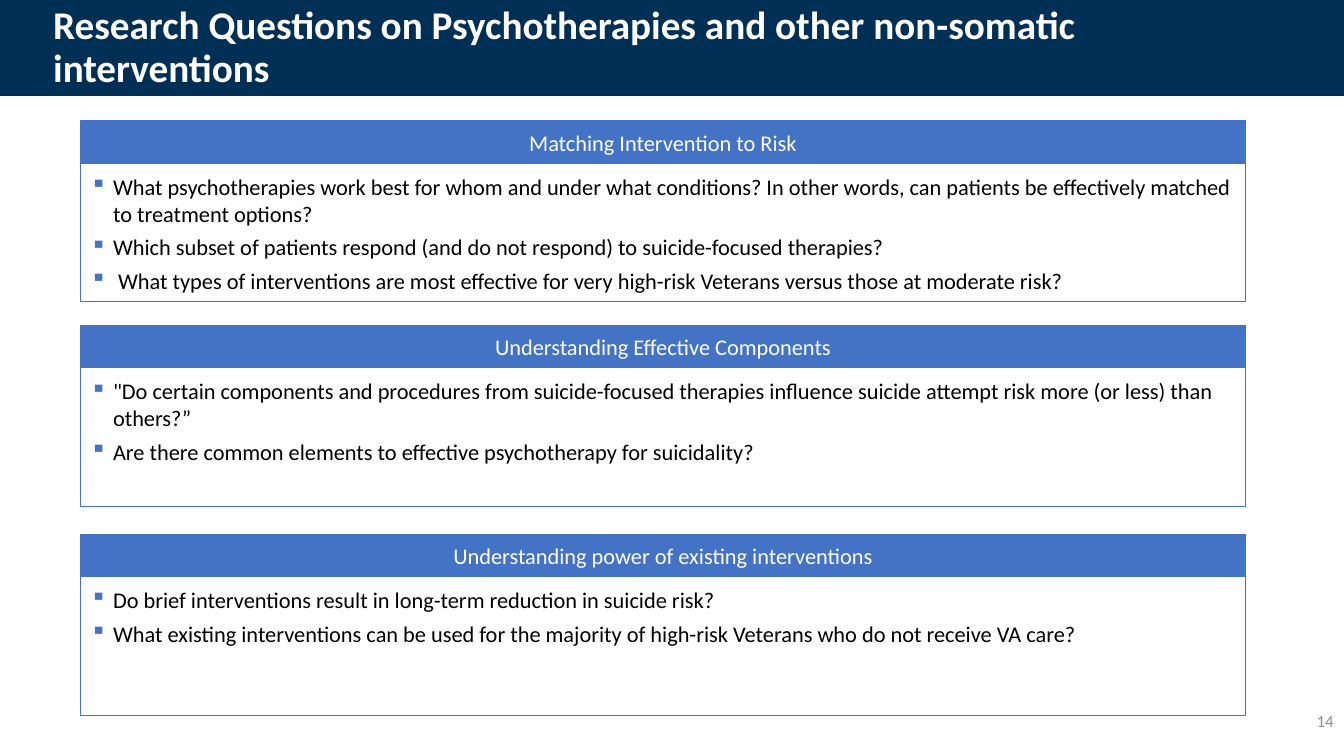
from lxml import etree
from pptx import Presentation
from pptx.dml.color import RGBColor
from pptx.enum.shapes import MSO_SHAPE
from pptx.enum.text import MSO_ANCHOR, MSO_AUTO_SIZE, PP_ALIGN
from pptx.oxml.ns import qn
from pptx.util import Cm, Pt

RECTANGLE = MSO_SHAPE.RECTANGLE
TOP, MIDDLE = MSO_ANCHOR.TOP, MSO_ANCHOR.MIDDLE
LEFT, CENTER, RIGHT = PP_ALIGN.LEFT, PP_ALIGN.CENTER, PP_ALIGN.RIGHT
NO_AUTOFIT = MSO_AUTO_SIZE.NONE

COLORS = {"navy": "002F56", "blue": "4472C4", "white": "FFFFFF",
          "black": "000000", "gray": "8C8C8C"}
FONT = "Calibri"
SLIDE_WIDTH, SLIDE_HEIGHT = Cm(33.87), Cm(19.05)
PANEL_LEFT, PANEL_WIDTH = Cm(2.03), Cm(29.36)
HEADING_HEIGHT, BODY_HEIGHT = Cm(1.06), Cm(3.5)
BULLET_INDENT = Cm(0.57)

# Top in centimetres, heading, questions
PANELS = [
    (3.05, "Matching Intervention to Risk", [
        "What psychotherapies work best for whom and under what conditions? "
        "In other words, can patients be effectively matched to treatment options?",
        "Which subset of patients respond (and do not respond) to "
        "suicide-focused therapies?",
        " What types of interventions are most effective for very high-risk "
        "Veterans versus those at moderate risk?",
    ]),
    (8.2, "Understanding Effective Components", [
        '"Do certain components and procedures from suicide-focused therapies '
        "influence suicide attempt risk more (or less) than others?”",
        "Are there common elements to effective psychotherapy for suicidality?",
    ]),
    (13.46, "Understanding power of existing interventions", [
        "Do brief interventions result in long-term reduction in suicide risk?",
        "What existing interventions can be used for the majority of high-risk "
        "Veterans who do not receive VA care?",
    ]),
]


def rgb(color):
    return RGBColor.from_string(COLORS[color])


def set_attributes(target, values):
    for name, value in values.items():
        setattr(target, name, value)


def format_frame(frame, anchor, inset_y=0.13):
    set_attributes(frame, {
        "word_wrap": True, "auto_size": NO_AUTOFIT, "vertical_anchor": anchor,
        "margin_left": Cm(0.25), "margin_right": Cm(0.25),
        "margin_top": Cm(inset_y), "margin_bottom": Cm(inset_y)})


def write(paragraph, text, size, color, align=LEFT, bold=False):
    paragraph.text = text
    paragraph.alignment = align
    set_attributes(paragraph.font, {"name": FONT, "size": Pt(size), "bold": bold})
    paragraph.font.color.rgb = rgb(color)


def add_rectangle(slide, left, top, width, height, fill, line=None):
    rectangle = slide.shapes.add_shape(RECTANGLE, left, top, width, height)
    rectangle.shadow.inherit = False
    rectangle.fill.solid()
    rectangle.fill.fore_color.rgb = rgb(fill)
    if line:
        rectangle.line.color.rgb = rgb(line)
        rectangle.line.width = Pt(0.75)
    else:
        rectangle.line.fill.background()
    return rectangle


def add_bullet(paragraph):
    properties = paragraph._p.get_or_add_pPr()
    properties.set("marL", str(BULLET_INDENT))
    properties.set("indent", str(-BULLET_INDENT))
    bullet_color = etree.SubElement(properties, qn("a:buClr"))
    etree.SubElement(bullet_color, qn("a:srgbClr"), val=COLORS["blue"])
    etree.SubElement(properties, qn("a:buChar"), char="▪")


def add_title(slide, text):
    band = add_rectangle(slide, 0, 0, SLIDE_WIDTH, Cm(2.42), "navy")
    title = slide.shapes.title
    title._element.addprevious(band._element)  # keeps the band behind the title
    set_attributes(title, {"left": Cm(1.09), "top": Cm(0.28),
                           "width": Cm(30.81), "height": Cm(1.88)})
    format_frame(title.text_frame, MIDDLE)
    heading = title.text_frame.paragraphs[0]
    write(heading, text, 28, "white", bold=True)
    heading.line_spacing = 0.9


def add_panel(slide, top, heading, questions):
    body = add_rectangle(slide, PANEL_LEFT, top + HEADING_HEIGHT, PANEL_WIDTH,
                         BODY_HEIGHT, "white", "blue")
    frame = body.text_frame
    format_frame(frame, TOP, inset_y=0.25)
    for index, question in enumerate(questions):
        paragraph = frame.add_paragraph() if index else frame.paragraphs[0]
        add_bullet(paragraph)
        write(paragraph, question, 16, "black")
        if index:
            paragraph.space_before = Pt(4.8)

    header = add_rectangle(slide, PANEL_LEFT, top, PANEL_WIDTH,
                           HEADING_HEIGHT, "blue", "blue")
    format_frame(header.text_frame, MIDDLE)
    write(header.text_frame.paragraphs[0], heading, 16, "white", CENTER)


def add_page_number(slide, number):
    box = slide.shapes.add_textbox(Cm(26.24), Cm(17.65), Cm(7.62), Cm(1.02))
    format_frame(box.text_frame, MIDDLE)
    write(box.text_frame.paragraphs[0], number, 12, "gray", RIGHT)


def main():
    presentation = Presentation()
    presentation.slide_width = SLIDE_WIDTH
    presentation.slide_height = SLIDE_HEIGHT
    slide = presentation.slides.add_slide(presentation.slide_layouts[5])
    add_title(slide, "Research Questions on Psychotherapies and other "
                     "non-somatic interventions")
    for top, heading, questions in PANELS:
        add_panel(slide, Cm(top), heading, questions)
    add_page_number(slide, "14")
    presentation.save("out.pptx")


if __name__ == "__main__":
    main()
